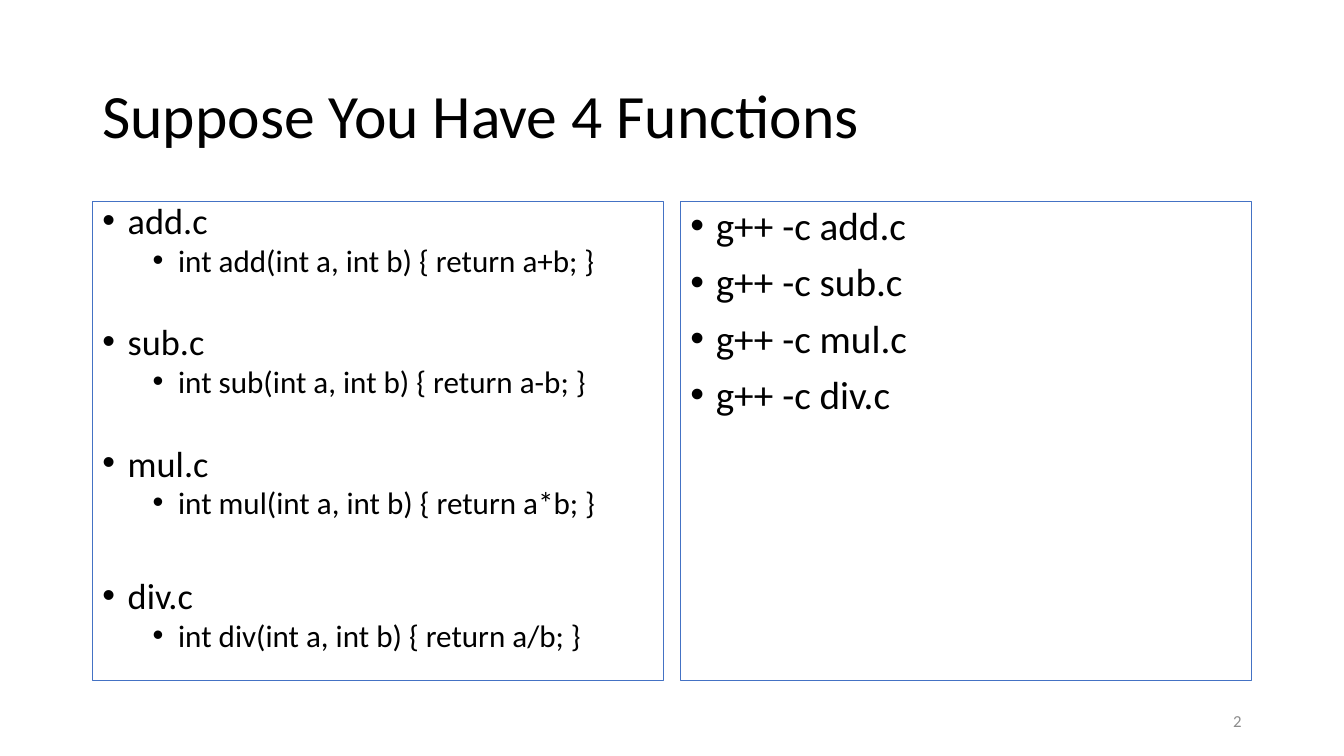
from lxml.etree import SubElement as Sub
from pptx import Presentation as Deck
from pptx.dml.color import RGBColor as Rgb
from pptx.enum.shapes import MSO_SHAPE as Shape
from pptx.enum.text import MSO_ANCHOR as Anchor, PP_ALIGN as Align
from pptx.oxml.ns import qn
from pptx.util import Cm, Pt

BLACK = Rgb(0, 0, 0)
GREY = Rgb(0x8C, 0x8C, 0x8C)
BLUE = Rgb(0x44, 0x72, 0xC4)
FONT = "Calibri"
LEFT, TOP = 2.33, 5.08
WIDE, HIGH = 14.39, 12.08
RIGHT = 17.15
HANG = 0.64
CODE = [("add", "+", 10), ("sub", "-", 35.5), ("mul", "*", 35.5), ("div", "/", 43.7)]


def style(para, size, color=BLACK):
    para.font.name = FONT
    para.font.size = Pt(size)
    para.font.color.rgb = color


def add_label(slide, text, box, size, color=BLACK, align=Align.LEFT):
    frame = slide.shapes.add_textbox(*map(Cm, box)).text_frame
    frame.word_wrap = True
    frame.vertical_anchor = Anchor.MIDDLE
    para = frame.paragraphs[0]
    para.text = text
    para.alignment = align
    style(para, size, color)


def add_bullet(para, text, size, gap, lines, level=0):
    para.text = text
    para.level = level
    para.alignment = Align.LEFT
    para.line_spacing = lines
    para.space_before = Pt(gap)
    style(para, size)
    props = para._p.get_or_add_pPr()
    props.set("marL", str(Cm(HANG + level * 1.27)))
    props.set("indent", str(-Cm(HANG)))
    Sub(props, qn("a:buFont")).set("typeface", "Arial")
    Sub(props, qn("a:buChar")).set("char", "•")
    props.append(props.find(qn("a:defRPr")))


def add_panel(slide, left, items):
    panel = slide.shapes.add_shape(
        Shape.RECTANGLE, Cm(left), Cm(TOP), Cm(WIDE), Cm(HIGH))
    panel.shadow.inherit = False
    panel.fill.background()
    panel.line.color.rgb = BLUE
    panel.line.width = Pt(0.75)
    frame = panel.text_frame
    frame.word_wrap = True
    frame.vertical_anchor = Anchor.TOP
    for index, item in enumerate(items):
        para = frame.add_paragraph() if index else frame.paragraphs[0]
        add_bullet(para, *item)


def main():
    deck = Deck()
    deck.slide_width, deck.slide_height = Cm(33.87), Cm(19.05)
    slide = deck.slides.add_slide(deck.slide_layouts[6])
    add_label(slide, "Suppose You Have 4 Functions", (LEFT, 1.02, 29.21, 3.68), 44)
    source = []
    for name, sign, gap in CODE:
        body = f"int {name}(int a, int b) {{ return a{sign}b; }}"
        source += [(f"{name}.c", 25.9, gap, 0.8), (body, 22.2, 5, 0.8, 1)]
    add_panel(slide, LEFT, source)
    add_panel(slide, RIGHT, [(f"g++ -c {name}.c", 28, 10, 0.9) for name, *_ in CODE])
    add_label(slide, "2", (23.92, 17.65, 7.62, 1.01), 12, GREY, Align.RIGHT)
    deck.save("out.pptx")


if __name__ == "__main__":
    main()
